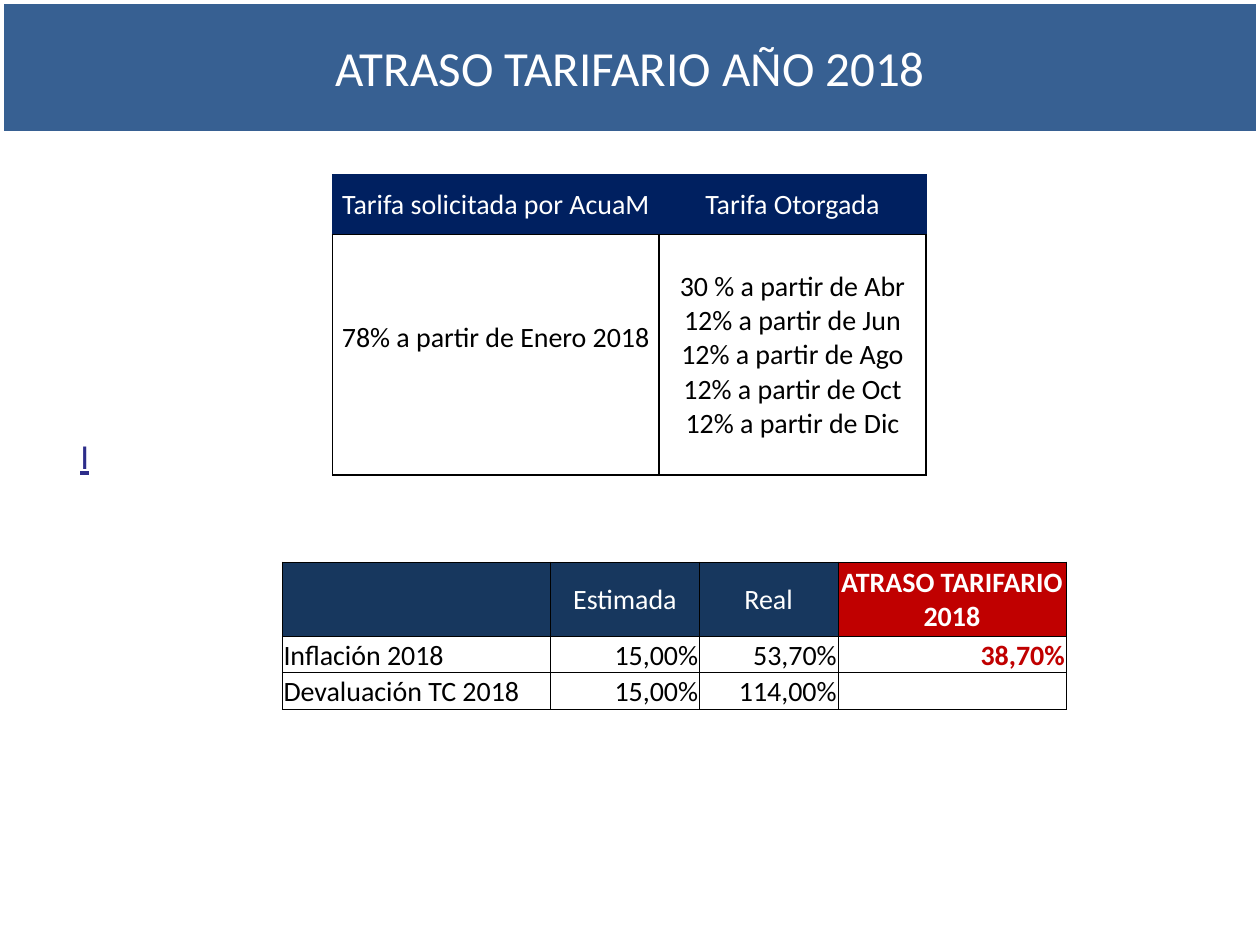
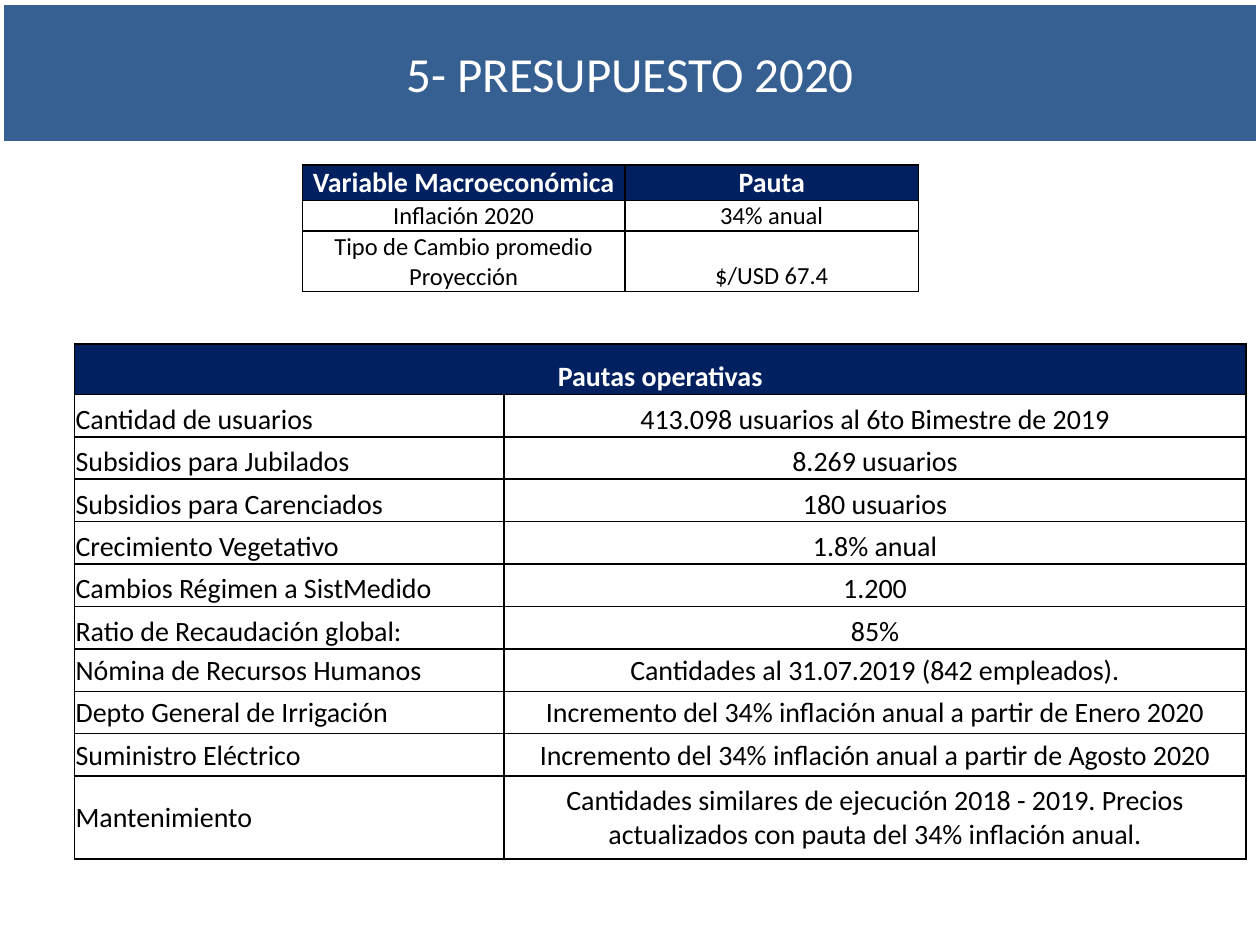
import dataclasses
import typing

import lxml.etree
import pptx
import pptx.dml.color
import pptx.enum.shapes
import pptx.enum.text
import pptx.oxml.ns
import pptx.slide
import pptx.util

Inches = pptx.util.Inches
Pt = pptx.util.Pt
Align = pptx.enum.text.PP_ALIGN
Anchor = pptx.enum.text.MSO_ANCHOR

COLORS = {
    "band": "376092", "navy": "002060", "slate": "17375E", "red": "C00000",
    "link": "2D2D8A", "black": "000000", "white": "FFFFFF",
}
FONT = "Calibri"
PAD = {"margin_left": Inches(0.01), "margin_right": Inches(0.01),
       "margin_top": Inches(0.01), "margin_bottom": 0}
PLAIN = {"first_row": False, "horz_banding": False}


@dataclasses.dataclass
class Cell:
    text: str
    align: Align = Align.CENTER
    anchor: Anchor = Anchor.BOTTOM
    size: int = 16
    bold: bool = False
    color: str = "black"
    fill: str = ""
    edge: str = "black"
    foot: float = 0


@dataclasses.dataclass
class Grid:
    left: float
    top: float
    cols: list[float]
    rows: list[float]
    cells: list[list[Cell]]
    line: float = 1
    span: bool = False


def assign(item: typing.Any, values: dict) -> None:
    for name, value in values.items():
        setattr(item, name, value)


def tint(name: str) -> pptx.dml.color.RGBColor:
    return pptx.dml.color.RGBColor.from_string(COLORS[name])


def write(frame: typing.Any, text: str, align: Align, color: str, **style) -> None:
    """Put each line of text in its own paragraph."""
    for i, line in enumerate(text.split("\n")):
        par = frame.add_paragraph() if i else frame.paragraphs[0]
        par.alignment = align
        run = par.add_run()
        run.text = line
        assign(run.font, {"name": FONT, **style})
        run.font.color.rgb = tint(color)


def border(cell: typing.Any, side: str, color: str, width: float) -> None:
    qn = pptx.oxml.ns.qn
    line = lxml.etree.SubElement(cell._tc.get_or_add_tcPr(), qn("a:ln" + side),
                                 w=str(Pt(width)))
    fill = lxml.etree.SubElement(line, qn("a:solidFill"))
    lxml.etree.SubElement(fill, qn("a:srgbClr"), val=COLORS[color])


def draw_cell(cell: typing.Any, data: Cell, width: float) -> None:
    assign(cell, {**PAD, "margin_bottom": Inches(data.foot),
                  "vertical_anchor": data.anchor})
    for side in "LRTB":
        border(cell, side, "black" if side == "B" else data.edge, width)
    if data.fill:
        cell.fill.solid()
        cell.fill.fore_color.rgb = tint(data.fill)
    else:
        cell.fill.background()
    write(cell.text_frame, data.text, data.align, data.color,
          size=Pt(data.size), bold=data.bold)


def draw_grid(slide: pptx.slide.Slide, grid: Grid) -> None:
    table = slide.shapes.add_table(
        len(grid.rows), len(grid.cols), Inches(grid.left), Inches(grid.top),
        Inches(sum(grid.cols)), Inches(sum(grid.rows))).table
    assign(table, PLAIN)
    for col, width in zip(table.columns, grid.cols):
        col.width = Inches(width)
    for row, height in zip(table.rows, grid.rows):
        row.height = Inches(height)
    if grid.span:
        table.cell(0, 0).merge(table.cell(0, len(grid.cols) - 1))
    for r, line in enumerate(grid.cells):
        for c, data in enumerate(line):
            draw_cell(table.cell(r, c), data, grid.line)


def draw_band(slide: pptx.slide.Slide, text: str, top: float, height: float) -> None:
    band = slide.shapes.add_shape(
        pptx.enum.shapes.MSO_SHAPE.RECTANGLE,
        0, Inches(top), Inches(10), Inches(height))
    band.shadow.inherit = False
    band.fill.solid()
    band.fill.fore_color.rgb = tint("band")
    band.line.color.rgb = tint("white")
    band.line.width = Pt(4.5)
    assign(band.text_frame, {"word_wrap": False, "vertical_anchor": Anchor.MIDDLE})
    write(band.text_frame, text, Align.CENTER, "white", size=Pt(28))


def draw_mark(slide: pptx.slide.Slide) -> None:
    box = slide.shapes.add_textbox(Inches(0.54), Inches(3.4), Inches(1), Inches(0.45))
    box.text_frame.word_wrap = True
    write(box.text_frame, "I", Align.LEFT, "link", size=Pt(20), underline=True)


def head(text: str, fill: str = "navy", **style) -> Cell:
    return Cell(text, color="white", fill=fill, **style)


def delay() -> list[Grid]:
    """Tables of the 2018 tariff delay."""
    mid = Anchor.MIDDLE
    months = ["30 % a partir de Abr"]
    months += [f"12% a partir de {m}" for m in ("Jun", "Ago", "Oct", "Dic")]
    rates = Grid(2.64, 1.39, [2.59, 2.12], [0.47, 1.91], [
        [head(t, anchor=mid, edge="navy")
         for t in ("Tarifa solicitada por AcuaM", "Tarifa Otorgada")],
        [Cell("78% a partir de Enero 2018", anchor=mid, foot=0.27),
         Cell("\n".join(months), anchor=mid)],
    ])
    top = [head(t, "slate", anchor=mid) for t in ("", "Estimada", "Real")]
    top.append(head("ATRASO TARIFARIO 2018", "red", anchor=mid, bold=True))
    data = [("Inflación 2018", "15,00%", "53,70%", "38,70%"),
            ("Devaluación TC 2018", "15,00%", "114,00%", "")]
    body = [[Cell(name, Align.LEFT), *(Cell(v, Align.RIGHT) for v in vals),
             Cell(gap, Align.RIGHT, bold=True, color="red")]
            for name, *vals, gap in data]
    gaps = Grid(2.24, 4.46, [2.13, 1.18, 1.1, 1.81], [0.59, 0.29, 0.29],
                [top, *body], line=0.5)
    return [rates, gaps]


def budget() -> list[Grid]:
    """Tables of the 2020 budget."""
    macro = Grid(2.4, 1.31, [2.56, 2.33], [0.28, 0.24, 0.48], [
        [head(t, bold=True) for t in ("Variable Macroeconómica", "Pauta")],
        [Cell(t, size=14) for t in ("Inflación 2020", "34% anual")],
        [Cell(t, size=14)
         for t in ("Tipo de Cambio promedio Proyección", "$/USD 67.4")],
    ])
    low = [("Cantidad de usuarios", "413.098 usuarios al 6to Bimestre de 2019"),
           ("Subsidios para Jubilados", "8.269 usuarios"),
           ("Subsidios para Carenciados", "180 usuarios"),
           ("Crecimiento Vegetativo", "1.8% anual"),
           ("Cambios Régimen a SistMedido", "1.200"),
           ("Ratio de Recaudación global:", "85%")]
    rise = "Incremento del 34% inflación anual a partir de "
    mid = [("Nómina de Recursos Humanos", "Cantidades al 31.07.2019 (842 empleados)."),
           ("Depto General de Irrigación", rise + "Enero 2020"),
           ("Suministro Eléctrico", rise + "Agosto 2020"),
           ("Mantenimiento", "Cantidades similares de ejecución 2018 - 2019. "
            "Precios actualizados con pauta del 34% inflación anual.")]
    body = [[Cell(name, Align.LEFT, anchor), Cell(value, anchor=anchor)]
            for pairs, anchor in ((low, Anchor.BOTTOM), (mid, Anchor.MIDDLE))
            for name, value in pairs]
    first, last, total = 0.4, 0.66, 4.09
    count = len(body) - 1
    step = (total - first - last) / count
    rules = Grid(0.59, 2.73, [3.41, 5.89], [first, *[step] * count, last],
                 [[head("Pautas operativas", bold=True)], *body], span=True)
    return [macro, rules]


def main() -> None:
    deck = pptx.Presentation()
    assign(deck, {"slide_width": Inches(10), "slide_height": Inches(7.5)})
    pages = [("ATRASO TARIFARIO AÑO 2018", 0, 1.07, delay()),
             ("5- PRESUPUESTO 2020", 0.01, 1.14, budget())]
    for title, top, height, grids in pages:
        slide = deck.slides.add_slide(deck.slide_layouts[6])
        draw_band(slide, title, top, height)
        for grid in grids:
            draw_grid(slide, grid)
    draw_mark(deck.slides[0])
    deck.save("out.pptx")


if __name__ == "__main__":
    main()
